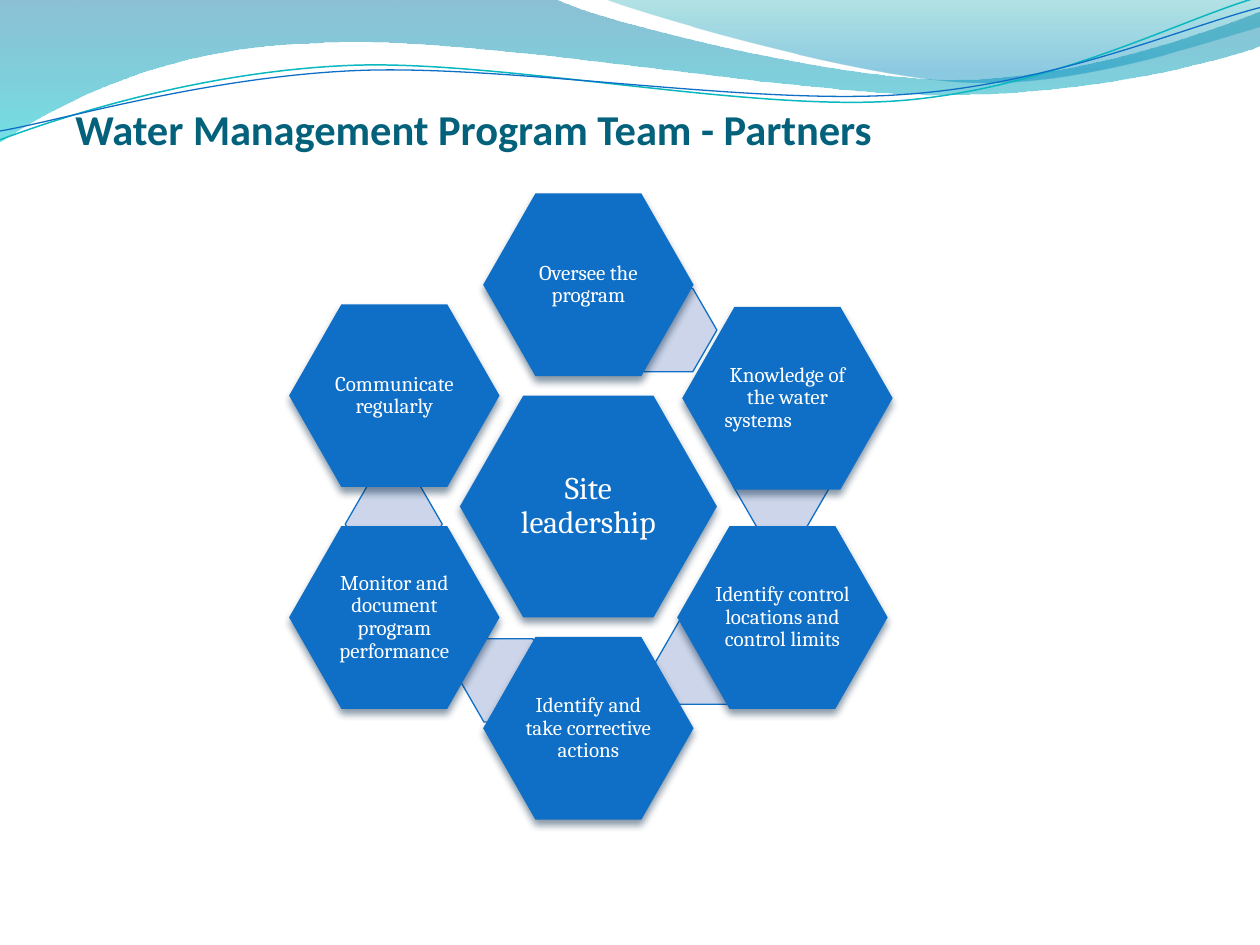
"""Build the water management team slide: a ring of duties around site leadership."""
from math import cos, radians, sin
from lxml.etree import SubElement
from pptx import Presentation
from pptx.dml.color import RGBColor
from pptx.enum.shapes import MSO_SHAPE as Shape
from pptx.enum.text import MSO_ANCHOR as Anchor, PP_ALIGN as Align
from pptx.oxml import parse_xml
from pptx.oxml.ns import qn
from pptx.util import Inches, Pt

COLORS = {"blue": "0F6FC6", "pale": "CCD5EA", "teal": "0AB8BF", "title": "04617B",
          "white": "FFFFFF", "shadow": "042747", "sea": "0074A1", "aqua": "00C6CF",
          "lagoon": "00A1A9", "sky": "008BBF"}
NS = 'xmlns:a="http://schemas.openxmlformats.org/drawingml/2006/main"'
CENTER_X, CENTER_Y = 4.67, 4.02
STEP_X, STEP_Y = 1.54, 0.88
TILT = 357.3

LEFT_WAVE = [(0, 0), (4.4, -0.01),
             (4.76, 0.17, 6.64, 0.63, 7.58, 0.63), (8.53, 0.63, 9.58, 0.26, 10, 0.09),
             (10.01, 0.36),
             (9.83, 0.44, 8.7, 0.76, 7.46, 0.75), (6.22, 0.75, 3.82, 0.28, 2.57, 0.34),
             (1.29, 0.36, 0.46, 0.83, -0.01, 1.13), (0, 0)]
RIGHT_WAVE = [(4.79, -0.01), (5.09, 0.11, 6.82, 0.62, 7.69, 0.65),
              (8.56, 0.69, 9.61, 0.32, 10, 0.21), (10, 0), (4.79, -0.01)]
TEAL_RIPPLE = [(0, 1.11), (0.48, 0.93, 1.58, 0.57, 2.77, 0.52),
               (3.95, 0.47, 5.93, 0.89, 7.13, 0.8), (8.33, 0.71, 9.38, 0.15, 9.98, -0.02)]
BLUE_RIPPLE = [(0, 1.04), (0.47, 0.96, 1.64, 0.61, 2.83, 0.56),
               (4.03, 0.51, 5.97, 0.84, 7.17, 0.75), (8.36, 0.67, 9.41, 0.21, 10, 0.06)]

DUTIES = [("Oversee the program", 0, -2, (0, 0), (4.92, 2.29)),
          ("Knowledge of the water systems\t", 1, -1, (0.04, 0.02), (5.82, 3.53)),
          ("Identify control locations and control limits", 1, 1, (0, 0), (5.2, 4.93)),
          ("Identify and take corrective actions", 0, 2, (0, 0), (3.65, 5.07)),
          ("Monitor and document program performance", -1, 1, (0, 0), (2.74, 3.83)),
          ("Communicate regularly", -1, -1, (0, 0), None)]


def rgb(name):
    """Return a named colour."""
    return RGBColor.from_string(COLORS[name])


def turn(segment, box, angle):
    """Turn the points of a segment about the middle of a box."""
    left, top, width, height = box
    mid_x, mid_y = left + width / 2, top + height / 2
    c, s = cos(radians(angle)), sin(radians(angle))
    pairs = [(x - mid_x, y - mid_y) for x, y in zip(segment[::2], segment[1::2])]
    return [(mid_x + x * c - y * s, mid_y + x * s + y * c) for x, y in pairs]


def add_curve(slide, segments, box, close, rotation=0):
    """Draw lines and cubic curves as one outline that fills a box."""
    left, top, width, height = (Inches(length) for length in box)
    builder = slide.shapes.build_freeform(left, top)
    builder.add_line_segments([(left + width, top + height)], close=close)
    outline = builder.convert_to_shape()
    outline.rotation = rotation
    outline.shadow.inherit = False
    track = outline.element.spPr.find(".//" + qn("a:path"))
    for step in list(track):
        track.remove(step)
    for index, segment in enumerate(segments):
        kind = "cubicBezTo" if len(segment) == 6 else "lnTo" if index else "moveTo"
        step = SubElement(track, qn("a:" + kind))
        for x, y in turn(segment, box, -rotation):
            SubElement(step, qn("a:pt"), x=str(Inches(x) - left), y=str(Inches(y) - top))
    if close:
        SubElement(track, qn("a:close"))
    return outline


def add_wave(slide, segments, box, stops):
    """Draw a closed wave with a translucent downward gradient."""
    wave = add_curve(slide, segments, box, True)
    wave.line.fill.background()
    colors = "".join(f'<a:gs pos="{pos * 1000}"><a:srgbClr val="{COLORS[name]}">'
                     f'<a:alpha val="{alpha * 1000}"/></a:srgbClr></a:gs>'
                     for pos, name, alpha in stops)
    gradient = parse_xml(f'<a:gradFill {NS} rotWithShape="1"><a:gsLst>{colors}</a:gsLst>'
                         '<a:lin ang="5400000" scaled="0"/></a:gradFill>')
    wave.element.spPr.insert(2, gradient)


def add_ripple(slide, segments, box, color, width):
    """Draw an open, slightly tilted wavy line."""
    ripple = add_curve(slide, segments, box, False, TILT)
    ripple.fill.background()
    ripple.line.color.rgb = rgb(color)
    ripple.line.width = Pt(width)


def add_hexagon(slide, left, top, width, height, color, slant):
    """Draw a plain filled hexagon."""
    hexagon = slide.shapes.add_shape(Shape.HEXAGON, Inches(left), Inches(top),
                                     Inches(width), Inches(height))
    hexagon.adjustments[0] = slant
    hexagon.adjustments[1] = 1.155
    hexagon.shadow.inherit = False
    hexagon.fill.solid()
    hexagon.fill.fore_color.rgb = rgb(color)
    return hexagon


def add_link(slide, left, top):
    """Draw a pale hexagon that links two duties."""
    link = add_hexagon(slide, left, top, 0.77, 0.66, "pale", 0.289)
    link.line.color.rgb = rgb("blue")
    link.line.width = Pt(0.75)


def add_text(slide, box, text, font, size, color, bold=False):
    """Add a wrapping text box with one formatted run."""
    frame = slide.shapes.add_textbox(*(Inches(length) for length in box)).text_frame
    frame.word_wrap = True
    run = frame.paragraphs[0].add_run()
    run.text = text
    run.font.name, run.font.size, run.font.bold = font, Pt(size), bold
    run.font.color.rgb = rgb(color)
    return frame


def add_role(slide, text, center_x, center_y, size, label_size, points, inset):
    """Draw a shadowed blue hexagon with its centred label."""
    body, label = ((center_x - width / 2, center_y - height / 2, width, height)
                   for width, height in (size, label_size))
    role = add_hexagon(slide, *body, "blue", 0.286)
    role.line.fill.background()
    shadow = parse_xml(f'<a:outerShdw {NS} blurRad="{Pt(4.5)}" dist="{Pt(3)}" dir="5400000" '
                       f'rotWithShape="0"><a:srgbClr val="{COLORS["shadow"]}">'
                       '<a:alpha val="48000"/></a:srgbClr></a:outerShdw>')
    role.element.spPr.find(qn("a:effectLst")).append(shadow)
    frame = add_text(slide, label, text, "Cambria", points, "white")
    frame.vertical_anchor = Anchor.MIDDLE
    frame.margin_left = frame.margin_right = Inches(inset)
    frame.margin_top = frame.margin_bottom = Inches(inset)
    frame.paragraphs[0].alignment = Align.CENTER
    frame.paragraphs[0].line_spacing = 0.9


def main():
    """Build and save the slide."""
    deck = Presentation()
    deck.slide_width, deck.slide_height = Inches(10), Inches(7.5)
    slide = deck.slides.add_slide(deck.slide_layouts[6])
    add_wave(slide, LEFT_WAVE, (-0.01, -0.01, 10.02, 1.14), [(0, "sea", 45), (100, "aqua", 55)])
    add_wave(slide, RIGHT_WAVE, (4.79, -0.01, 5.21, 0.7), [(0, "lagoon", 30), (80, "sky", 45)])
    add_ripple(slide, TEAL_RIPPLE, (-0.02, 0.22, 10.02, 0.71), "teal", 0.85)
    add_ripple(slide, BLUE_RIPPLE, (-0.02, 0.3, 10.03, 0.58), "blue", 0.75)
    add_role(slide, "Site leadership", CENTER_X, CENTER_Y, (2.04, 1.76), (1.36, 1.18), 18, 0.03)
    for text, column, row, (nudge_x, nudge_y), link in DUTIES:
        if link:
            add_link(slide, *link)
        add_role(slide, text, CENTER_X + column * STEP_X + nudge_x,
                 CENTER_Y + row * STEP_Y + nudge_y, (1.67, 1.45), (1.12, 0.97), 12, 0.02)
    add_text(slide, (0.5, 0.77, 9, 0.9), "Water Management Program Team - Partners",
             "Calibri", 24.3, "title", True)
    deck.save("out.pptx")


if __name__ == "__main__":
    main()
